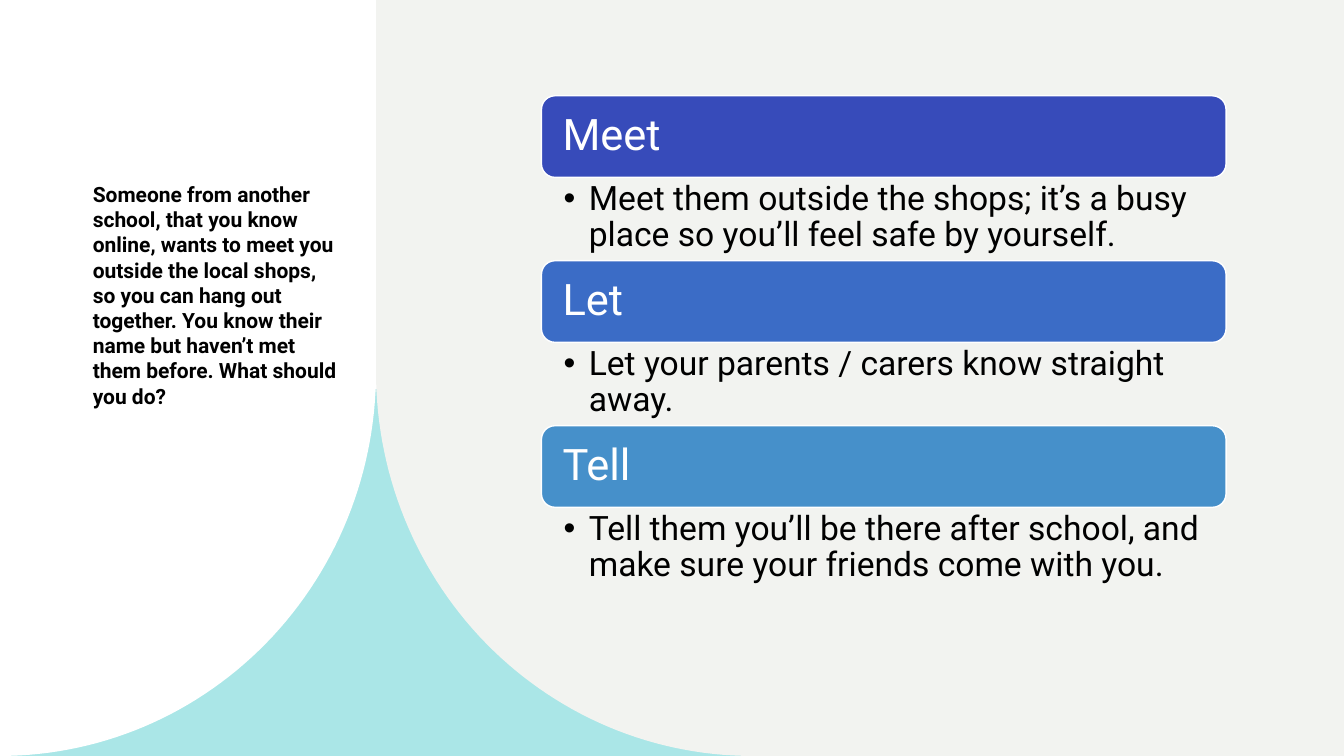
from dataclasses import dataclass
from math import cos, pi, sin

from lxml.etree import SubElement
from pptx import Presentation
from pptx.dml.color import RGBColor
from pptx.enum.shapes import MSO_SHAPE as SHAPE
from pptx.enum.text import MSO_ANCHOR as ANCHOR, MSO_AUTO_SIZE as AUTO, PP_ALIGN as ALIGN
from pptx.oxml.ns import qn
from pptx.util import Inches, Pt


@dataclass(frozen=True)
class Theme:
    """Colours, font and type sizes of the slide."""
    font: str = "Roboto"
    white: str = "FFFFFF"
    black: str = "000000"
    aqua: str = "AAE6E7"
    grey: str = "F2F3F0"
    bars: tuple = ("374BBA", "3B6CC6", "4690CA")
    title_size: float = 15
    bar_size: float = 31
    list_size: float = 24


THEME = Theme()
WIDTH, HEIGHT = 13.33, 7.5
QUESTION = (
    "Someone from another school, that you know online, wants to meet you "
    "outside the local shops, so you can hang out together. You know their "
    "name but haven’t met them before. What should you do?"
)
OPTIONS = (
    ("Meet", "Meet them outside the shops; it’s a busy place so you’ll feel safe by yourself."),
    ("Let", "Let your parents / carers know straight away."),
    ("Tell", "Tell them you’ll be there after school, and make sure your friends come with you."),
)


def paint(sp, colour, line=None):
    """Give a shape a flat fill and an optional thin outline."""
    sp.shadow.inherit = False
    sp.fill.solid()
    sp.fill.fore_color.rgb = RGBColor.from_string(colour)
    if line:
        sp.line.color.rgb = RGBColor.from_string(line)
        sp.line.width = Pt(1)
    else:
        sp.line.fill.background()


def write(tf, text, size, colour, bold=False, spacing=0.9):
    """Put one left-aligned run in the first paragraph and return the paragraph."""
    tf.word_wrap = True
    p = tf.paragraphs[0]
    p.alignment = ALIGN.LEFT
    p.line_spacing = spacing
    r = p.add_run()
    r.text = text
    r.font.name = THEME.font
    r.font.size = Pt(size)
    r.font.bold = bold
    r.font.color.rgb = RGBColor.from_string(colour)
    return p


def set_insets(tf, left, top, right, bottom):
    """Set the four text margins in inches."""
    tf.margin_left, tf.margin_top = Inches(left), Inches(top)
    tf.margin_right, tf.margin_bottom = Inches(right), Inches(bottom)


def add_bullet(p, indent):
    """Give a paragraph a round bullet with a hanging indent."""
    pPr = p._p.get_or_add_pPr()
    pPr.set("marL", str(Inches(indent)))
    pPr.set("indent", str(-Inches(indent)))
    SubElement(pPr, qn("a:buFont")).set("typeface", "Arial")
    SubElement(pPr, qn("a:buChar")).set("char", "•")


def add_curved_panel(slide, x, y, w, h, centre, radius_x, colour):
    """Draw a panel whose lower inner corner is a quarter ellipse around a centre."""
    cx, cy = centre
    radius_y = y + h - cy
    steps = 60
    angles = [pi / 2 * i / steps for i in range(steps + 1)]
    arc = [(cx + radius_x * cos(a), cy + radius_y * sin(a)) for a in angles]
    inner, outer = (x + w, x) if radius_x > 0 else (x, x + w)
    points = [(outer, y), (inner, y), *arc, (outer, y + h)]
    points = [(Inches(px), Inches(py)) for px, py in points]
    builder = slide.shapes.build_freeform(*points[0])
    builder.add_line_segments(points[1:])
    paint(builder.convert_to_shape(), colour)


def add_background(slide, x, y, w, h):
    """Draw the aqua base and the two curved panels that meet above it."""
    seam, curve_y, radius = 3.73, 3.69, 3.73
    base = slide.shapes.add_shape(
        SHAPE.RECTANGLE, Inches(x), Inches(y + 3.86), Inches(2 * radius), Inches(h - 3.86))
    paint(base, THEME.aqua)
    add_curved_panel(slide, x, y, seam, h, (x, y + curve_y), radius, THEME.white)
    add_curved_panel(slide, x + seam, y, w - seam, h,
                     (x + seam + radius, y + curve_y), -radius, THEME.grey)


def add_question(slide, x, y, w, h):
    """Place the question in the title placeholder, in front of the panels."""
    title = slide.shapes.title
    title.left, title.top, title.width, title.height = map(Inches, (x, y, w, h))
    tf = title.text_frame
    tf.auto_size = AUTO.NONE
    tf.vertical_anchor = ANCHOR.TOP
    set_insets(tf, 0.1, 0.05, 0.1, 0.05)
    write(tf, QUESTION, THEME.title_size, THEME.black, bold=True, spacing=1.0)
    slide.shapes.element.append(title.element)


def add_option(slide, x, y, w, h, heading, detail, colour):
    """Draw one heading bar with its bulleted answer below."""
    bar_h = 0.81
    bar = slide.shapes.add_shape(
        SHAPE.ROUNDED_RECTANGLE, Inches(x), Inches(y), Inches(w), Inches(bar_h))
    paint(bar, colour, THEME.white)
    bar.text_frame.vertical_anchor = ANCHOR.MIDDLE
    set_insets(bar.text_frame, 0.17, 0.1, 0.17, 0.1)
    write(bar.text_frame, heading, THEME.bar_size, THEME.white)

    answer = slide.shapes.add_textbox(
        Inches(x), Inches(y + bar_h), Inches(w), Inches(h - bar_h))
    set_insets(answer.text_frame, 0.22, 0.04, 0.24, 0.04)
    p = write(answer.text_frame, detail, THEME.list_size, THEME.black)
    add_bullet(p, 0.25)


def add_options(slide, x, y, w, h):
    """Stack the answer options evenly in the given box."""
    row_h = h / len(OPTIONS)
    for i, ((heading, detail), colour) in enumerate(zip(OPTIONS, THEME.bars)):
        add_option(slide, x, y + i * row_h, w, row_h, heading, detail, colour)


def main():
    """Build and save the slide."""
    prs = Presentation()
    prs.slide_width, prs.slide_height = Inches(WIDTH), Inches(HEIGHT)
    slide = prs.slides.add_slide(prs.slide_layouts[5])
    add_background(slide, 0, 0, WIDTH, HEIGHT)
    add_question(slide, 0.82, 1.75, 2.63, 2.73)
    add_options(slide, 5.37, 0.95, 6.79, 4.91)
    prs.save("out.pptx")


if __name__ == "__main__":
    main()
